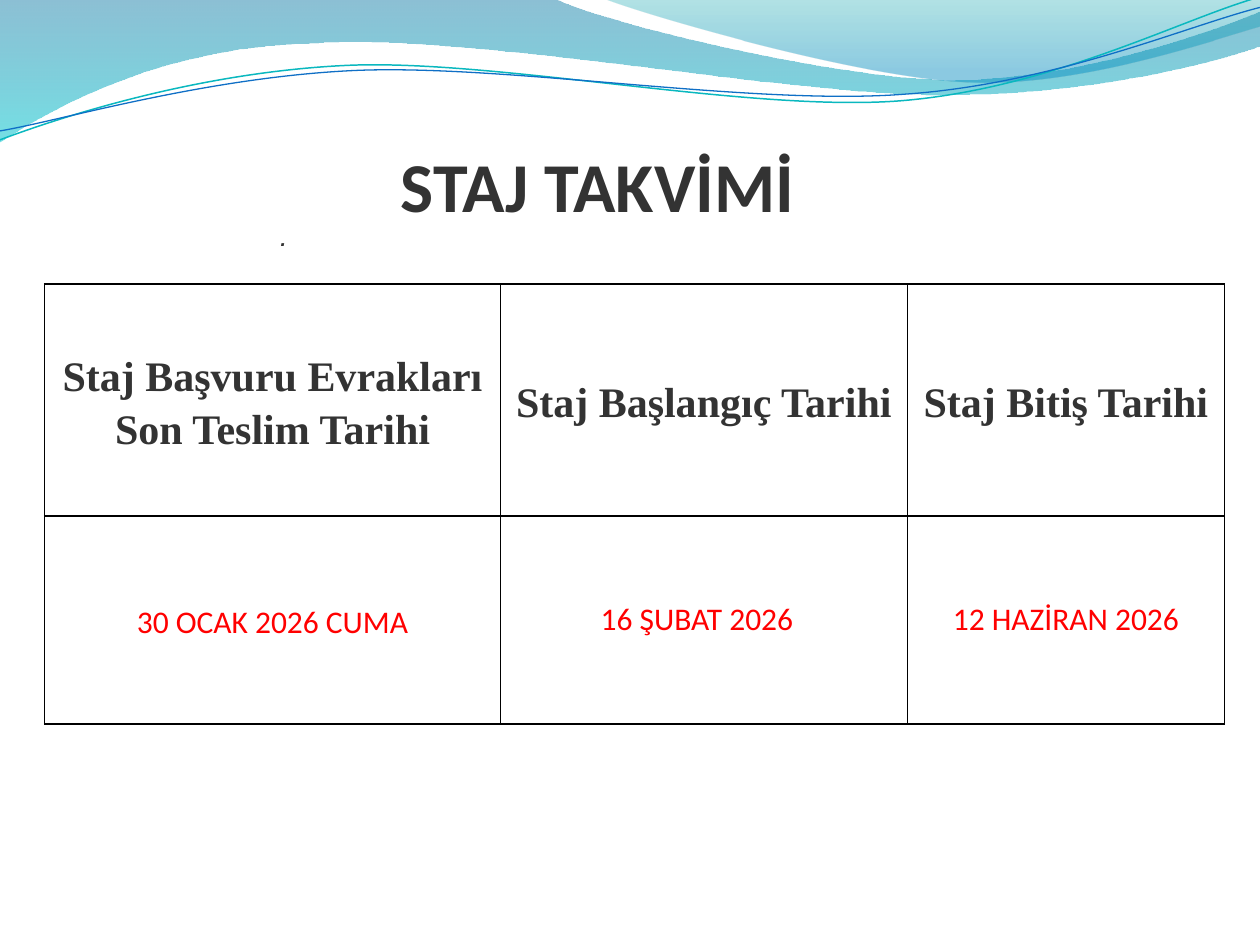
from dataclasses import dataclass

from lxml import etree
from pptx import Presentation
from pptx import util as u
from pptx.dml.color import RGBColor
from pptx.enum import text
from pptx.oxml.ns import qn

INK, RED, BLACK = "333333", "FF0000", "000000"


@dataclass
class Stop:
    position: float
    colour: str
    opacity: int


@dataclass
class Wave:
    """Points in cm: a segment of one point is a line, of three a curve."""
    start: tuple
    segments: list
    stops: tuple = ()
    line: str = ""
    width: float = 0
    rotation: float = 0


@dataclass
class DateColumn:
    heading: str
    date: str
    width: float
    extra_right: float = 0
    bottom: float = 0


WAVES = [
    Wave((0, 0), [
        [(11.18, -0.03)],
        [(12.09, 0.43), (16.87, 1.6), (19.25, 1.6)],
        [(21.67, 1.6), (24.33, 0.66), (25.4, 0.23)],
        [(25.43, 0.91)],
        [(24.97, 1.12), (22.1, 1.93), (18.95, 1.91)],
        [(15.8, 1.91), (9.7, 0.71), (6.53, 0.86)],
        [(3.28, 0.91), (1.17, 2.11), (-0.03, 2.87)],
    ], stops=(Stop(0, "0074A1", 45), Stop(1, "00C6CF", 55))),
    Wave((12.17, -0.03), [
        [(12.93, 0.28), (17.32, 1.57), (19.53, 1.65)],
        [(21.74, 1.75), (24.41, 0.81), (25.4, 0.53)],
        [(25.4, 0)],
    ], stops=(Stop(0, "00A1A9", 30), Stop(0.8, "008BBF", 45))),
    Wave((-0.05, 2.22), [
        [(1.19, 1.82), (4.02, 1.04), (7.05, 1.05)],
        [(10.05, 1.07), (15.02, 2.37), (18.08, 2.29)],
        [(21.13, 2.2), (23.86, 0.91), (25.41, 0.55)],
    ], line="0AB8BF", width=0.85, rotation=357.3),
    Wave((-0.04, 2.04), [
        [(1.16, 1.9), (4.17, 1.15), (7.2, 1.16)],
        [(10.25, 1.18), (15.13, 2.25), (18.19, 2.16)],
        [(21.22, 2.1), (23.93, 1.06), (25.45, 0.75)],
    ], line="0F6FC6", width=0.75, rotation=357.3),
]

COLUMNS = [
    DateColumn("Staj Başvuru Evrakları Son Teslim Tarihi", "30 OCAK 2026 CUMA", 9.19),
    DateColumn("Staj Başlangıç Tarihi", "16 ŞUBAT 2026", 8.2, 0.28, 0.12),
    DateColumn("Staj Bitiş Tarihi", "12 HAZİRAN 2026", 6.4, 0, 0.12),
]
ROW_HEIGHTS = (4.67, 4.19)

TITLE = dict(name="Calibri", size=u.Pt(40), bold=True)
DOT = dict(name="Arial", size=u.Pt(11), bold=True, italic=True)
HEADING = dict(name="Times New Roman", size=u.Pt(24), bold=True)
DATE = dict(name="Calibri", size=u.Pt(18), bold=False)


def rgb(colour: str) -> RGBColor:
    return RGBColor.from_string(colour)


def set_all(target, values: dict) -> None:
    for name, value in values.items():
        setattr(target, name, value)


def add_run(p, words: str, font: dict, colour: str) -> None:
    r = p.add_run()
    r.text = words
    set_all(r.font, font)
    r.font.color.rgb = rgb(colour)


def bend_segments(s, segments: list) -> None:
    """Turn each three-point segment of the outline into one cubic curve."""
    lines = s.element.spPr.iter(qn("a:lnTo"))
    steps = iter(list(lines))
    for segment in segments:
        group = [next(steps) for _ in segment]
        if len(group) == 3:
            curve = etree.Element(qn("a:cubicBezTo"))
            group[0].addprevious(curve)
            for step in group:
                curve.append(step[0])
                step.getparent().remove(step)


def add_wave(slide, wave: Wave) -> None:
    builder = slide.shapes.build_freeform(*map(u.Cm, wave.start))
    builder.add_line_segments(
        [(u.Cm(x), u.Cm(y)) for segment in wave.segments for x, y in segment],
        close=bool(wave.stops))
    s = builder.convert_to_shape()
    bend_segments(s, wave.segments)
    s.rotation = wave.rotation
    s.shadow.inherit = False
    if not wave.stops:
        s.fill.background()
        s.line.color.rgb = rgb(wave.line)
        s.line.width = u.Pt(wave.width)
        return
    s.line.fill.background()
    s.fill.gradient()
    s.fill.gradient_angle = 270
    for target, stop in zip(s.fill.gradient_stops, wave.stops):
        target.position = stop.position
        target.color.rgb = rgb(stop.colour)
    for clr, stop in zip(s.element.spPr.iter(qn("a:srgbClr")), wave.stops):
        etree.SubElement(clr, qn("a:alpha"), val=str(stop.opacity * 1000))


def add_borders(cell) -> None:
    tc_pr = cell._tc.get_or_add_tcPr()
    for i, side in enumerate(("lnL", "lnR", "lnT", "lnB")):
        ln = etree.Element(qn(f"a:{side}"), w=str(u.Pt(1)))
        fill = etree.SubElement(ln, qn("a:solidFill"))
        etree.SubElement(fill, qn("a:srgbClr"), val=BLACK)
        tc_pr.insert(i, ln)


def fill_cell(cell, words: str, font: dict, colour: str,
              extra_right: float = 0, bottom: float = 0) -> None:
    set_all(cell, dict(margin_left=u.Cm(0.18), margin_right=u.Cm(0.18 + extra_right),
                       margin_top=0, margin_bottom=u.Cm(bottom),
                       vertical_anchor=text.MSO_ANCHOR.MIDDLE))
    cell.fill.background()
    add_borders(cell)
    p = cell.text_frame.paragraphs[0]
    set_all(p, dict(alignment=text.PP_ALIGN.CENTER, line_spacing=1.15,
                    space_after=u.Pt(8.3)))
    add_run(p, words, font, colour)


def add_calendar(slide) -> None:
    frame = slide.shapes.add_table(
        2, len(COLUMNS), u.Cm(0.9), u.Cm(5.73),
        u.Cm(sum(c.width for c in COLUMNS)), u.Cm(sum(ROW_HEIGHTS)))
    table = frame.table
    set_all(table, dict(first_row=False, horz_banding=False))
    for row, height in zip(table.rows, ROW_HEIGHTS):
        row.height = u.Cm(height)
    for i, column in enumerate(COLUMNS):
        table.columns[i].width = u.Cm(column.width)
        fill_cell(table.cell(0, i), column.heading, HEADING, INK)
        fill_cell(table.cell(1, i), column.date, DATE, RED,
                  column.extra_right, column.bottom)


def add_title(slide) -> None:
    s = slide.shapes.add_textbox(u.Cm(4.29), u.Cm(2.74), u.Cm(16.79), u.Cm(2.44))
    tf = s.text_frame
    set_all(tf, dict(word_wrap=True, vertical_anchor=text.MSO_ANCHOR.MIDDLE,
                     auto_size=text.MSO_AUTO_SIZE.SHAPE_TO_FIT_TEXT))
    lines = (("STAJ TAKVİMİ", TITLE, 3.54), (".", DOT, 1.12))
    for i, (words, font, indent) in enumerate(lines):
        p = tf.add_paragraph() if i else tf.paragraphs[0]
        p.alignment = text.PP_ALIGN.JUSTIFY
        p._p.get_or_add_pPr().set("indent", str(u.Cm(indent)))
        add_run(p, words, font, INK)


def main() -> None:
    prs = Presentation()
    prs.slide_width, prs.slide_height = u.Cm(25.4), u.Cm(19.05)
    slide = prs.slides.add_slide(prs.slide_layouts[6])

    # Waves along the top
    for wave in WAVES:
        add_wave(slide, wave)

    # Calendar and its title
    add_calendar(slide)
    add_title(slide)

    prs.save("out.pptx")


if __name__ == "__main__":
    main()
